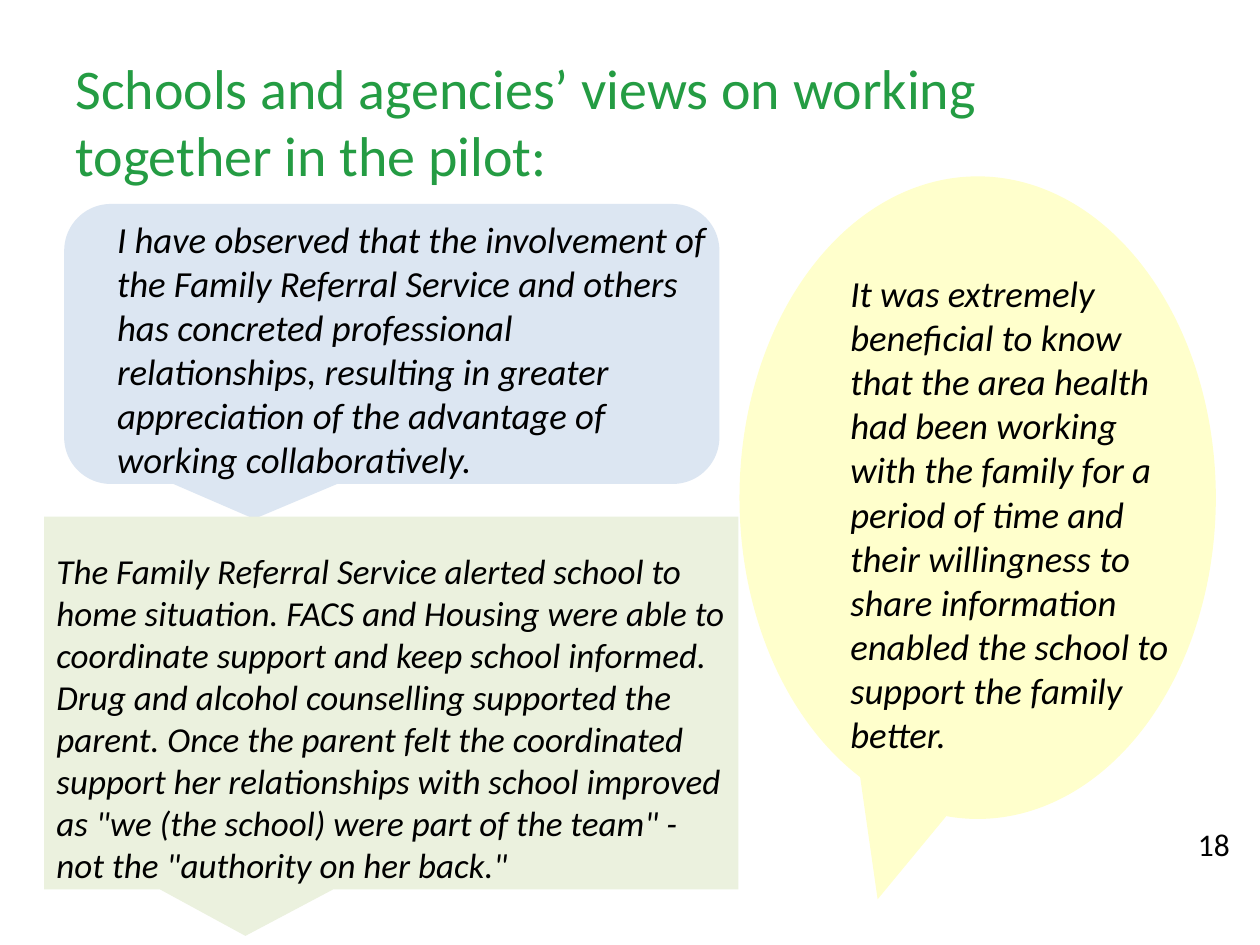
"""Build a slide of quotations in speech callouts about schools and agencies."""
from pptx import Presentation
from pptx import util as u
from pptx.dml import color
from pptx.enum import shapes, text


def rgb(value):
    return color.RGBColor.from_string(value)


class QuoteSlide:
    font = "Calibri"
    tail = (-0.21, 0.625)

    def __init__(self, slide):
        self.slide = slide

    def callout(self, kind, box, fill):
        shape = self.slide.shapes.add_shape(kind, *map(u.Pt, box))
        shape.shadow.inherit = False
        shape.fill.solid()
        shape.fill.fore_color.rgb = rgb(fill)
        shape.line.fill.background()
        shape.adjustments[0], shape.adjustments[1] = self.tail

    def text(self, words, box, size, ink="000000", italic=False,
             anchor=text.MSO_ANCHOR.TOP, fit=text.MSO_AUTO_SIZE.SHAPE_TO_FIT_TEXT):
        shape = self.slide.shapes.add_textbox(*map(u.Pt, box))
        frame = shape.text_frame
        frame.word_wrap = True
        frame.auto_size = fit
        frame.vertical_anchor = anchor
        paragraph = frame.paragraphs[0]
        paragraph.text = words
        font = paragraph.font
        font.name, font.size, font.italic = self.font, u.Pt(size), italic
        font.color.rgb = rgb(ink)
        return shape

    def title(self, words, box):
        shape = self.text(words, box, 32, "249C43", anchor=text.MSO_ANCHOR.MIDDLE,
                          fit=text.MSO_AUTO_SIZE.NONE)
        shape.fill.solid()
        shape.fill.fore_color.rgb = rgb("FFFFFF")

    def quote(self, words, box, size=21):
        self.text(words, box, size, italic=True)


def main():
    presentation = Presentation()
    presentation.slide_width, presentation.slide_height = u.Pt(720), u.Pt(540)
    page = QuoteSlide(presentation.slides.add_slide(presentation.slide_layouts[6]))
    kinds = shapes.MSO_SHAPE

    page.title("Schools and agencies’ views on working together in the pilot:",
               (36, 21.6, 648, 95))
    page.callout(kinds.ROUNDED_RECTANGULAR_CALLOUT, (36.7, 116.6, 374.4, 160), "DCE6F2")
    page.callout(kinds.OVAL_CALLOUT, (422.6, 100.8, 272.2, 367.2), "FFFFCC")
    page.callout(kinds.RECTANGULAR_CALLOUT, (25.2, 295.2, 396.8, 213), "EBF1DE")

    page.quote(
        "The Family Referral Service alerted school to home situation. FACS and Housing "
        "were able to coordinate support and keep school informed. Drug and alcohol "
        "counselling supported the parent. Once the parent felt the coordinated support "
        'her relationships with school improved as "we (the school) were part of the '
        'team" - not the "authority on her back."',
        (25.2, 310.6, 396.8, 223), 20)
    page.quote(
        "I have observed that the involvement of the Family Referral Service and others "
        "has concreted professional relationships, resulting in greater appreciation of "
        "the advantage of working collaboratively.",
        (59.8, 120.2, 351.6, 181.4))
    page.quote(
        "It was extremely beneficial to know that the area health had been working with "
        "the family for a period of time and their willingness to share information "
        "enabled the school to support the family better.",
        (478.8, 151.2, 203.9, 308.9))
    page.text("18", (677.5, 468, 41, 28.8), 18)

    presentation.save("out.pptx")


if __name__ == "__main__":
    main()
